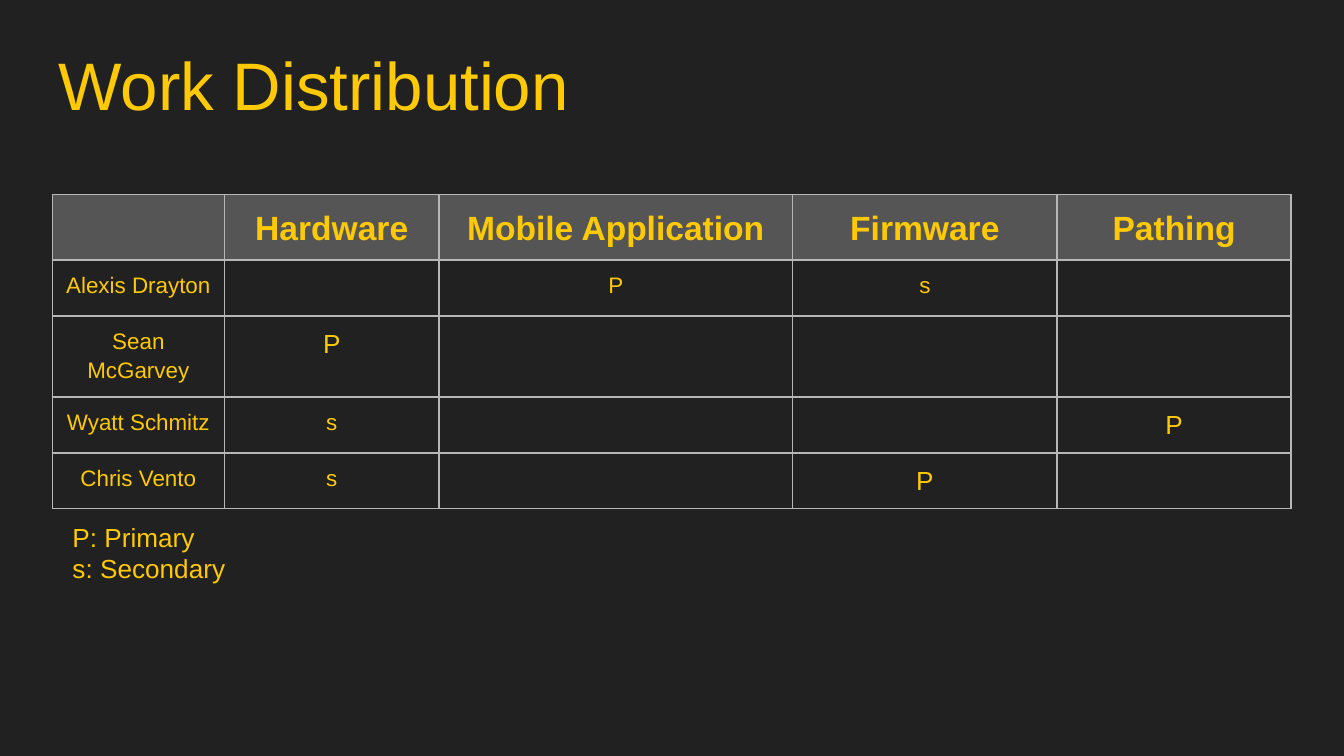
"""Build the work distribution slide with its responsibility table."""
from lxml import etree
from pptx import Presentation
from pptx.dml.color import RGBColor
from pptx.enum.text import MSO_ANCHOR, PP_ALIGN
from pptx.oxml.ns import qn
from pptx.util import Cm, Pt

TOP = MSO_ANCHOR.TOP
LEFT, CENTER = PP_ALIGN.LEFT, PP_ALIGN.CENTER
COLORS = {"background": "212121", "text": "FFC904", "header": "555555", "border": "B7B7B7"}
WIDTHS = [3.25, 4.06, 6.68, 5.0, 4.42]
HEIGHTS = [1.17, 1.06, 1.44, 1.06, 1.0]
ROWS = [
    ["", "Hardware", "Mobile Application", "Firmware", "Pathing"],
    ["Alexis Drayton", "", "P", "s", ""],
    ["Sean McGarvey", "P", "", "", ""],
    ["Wyatt Schmitz", "s", "", "", "P"],
    ["Chris Vento", "s", "", "P", ""],
]
SMALL_PRIMARY = (1, 2)


def style_text(frame, size, align=LEFT, bold=False):
    for para in frame.paragraphs:
        para.alignment = align
        for span in para.runs:
            span.font.name = "Arial"
            span.font.size = Pt(size)
            span.font.bold = bold
            span.font.color.rgb = RGBColor.from_string(COLORS["text"])


def add_borders(cell):
    properties = cell._tc.get_or_add_tcPr()
    for side in ("lnL", "lnR", "lnT", "lnB"):
        line = etree.SubElement(properties, qn(f"a:{side}"), w=str(Pt(1)))
        fill = etree.SubElement(line, qn("a:solidFill"))
        etree.SubElement(fill, qn("a:srgbClr"), val=COLORS["border"])


deck = Presentation()
deck.slide_width, deck.slide_height = Cm(25.4), Cm(14.29)
page = deck.slides.add_slide(deck.slide_layouts[5])
page.background.fill.solid()
page.background.fill.fore_color.rgb = RGBColor.from_string(COLORS["background"])

title = page.shapes.title
title.left, title.top, title.width, title.height = Cm(0.86), Cm(0.56), Cm(23.67), Cm(1.6)
title.text_frame.text = "Work Distribution"
legend = page.shapes.add_textbox(Cm(1.12), Cm(9.6), Cm(6.73), Cm(3.07))
legend.text_frame.text = "P: Primary\ns: Secondary"
for box, size in ((title, 36), (legend, 14)):
    frame = box.text_frame
    frame.word_wrap = True
    frame.vertical_anchor = TOP
    frame.margin_left = frame.margin_right = frame.margin_top = frame.margin_bottom = Cm(0.25)
    style_text(frame, size)

table = page.shapes.add_table(
    len(ROWS), len(WIDTHS), Cm(0.99), Cm(3.68), Cm(sum(WIDTHS)), Cm(sum(HEIGHTS))
).table
table.horz_banding = False
for column, width in zip(table.columns, WIDTHS):
    column.width = Cm(width)
for row, height in zip(table.rows, HEIGHTS):
    row.height = Cm(height)

for row_index, row in enumerate(ROWS):
    header = row_index == 0
    for column_index, label in enumerate(row):
        cell = table.cell(row_index, column_index)
        cell.margin_left = cell.margin_right = cell.margin_top = cell.margin_bottom = Cm(0.18)
        add_borders(cell)
        if header:
            cell.fill.solid()
            cell.fill.fore_color.rgb = RGBColor.from_string(COLORS["header"])
        else:
            cell.fill.background()
        para = cell.text_frame.paragraphs[0]
        para.line_spacing = 1.15
        if label:
            para.text = label
            large = label == "P" and (row_index, column_index) != SMALL_PRIMARY
            size = 18 if header else 14 if large else 12
            style_text(cell.text_frame, size, CENTER, header)
        else:
            etree.SubElement(para._p, qn("a:endParaRPr"), sz="1200")

deck.save("out.pptx")
